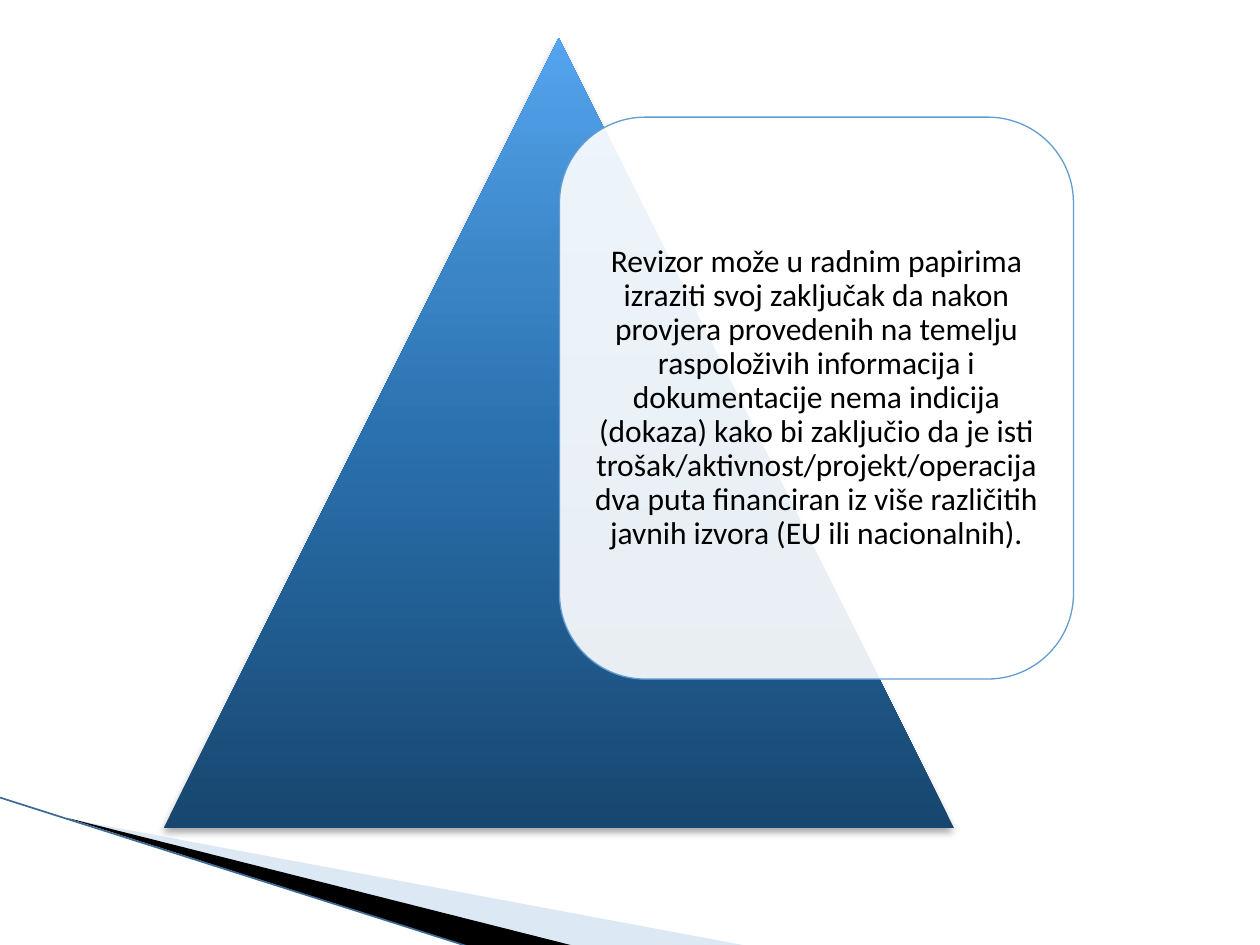
from lxml import etree
from pptx import Presentation
from pptx.dml.color import RGBColor
from pptx.enum import shapes, text
from pptx.oxml import parse_xml
from pptx.oxml.ns import nsdecls, qn
from pptx.util import Inches, Pt

WHITE = RGBColor(0xFF, 0xFF, 0xFF)
BLACK = RGBColor(0x00, 0x00, 0x00)
PALE_BLUE = RGBColor(0xAB, 0xC6, 0xE6)
EDGE_BLUE = RGBColor(0x3A, 0x6A, 0x96)
CARD_BLUE = RGBColor(0x62, 0x9D, 0xD1)
PYRAMID_STOPS = [
    (0, RGBColor(0x17, 0x46, 0x6F)),
    (50, RGBColor(0x2A, 0x71, 0xAF)),
    (70, RGBColor(0x3B, 0x85, 0xC6)),
    (100, RGBColor(0x55, 0xA4, 0xEF)),
]

CONCLUSION = (
    "Revizor može u radnim papirima izraziti svoj zaključak da nakon provjera "
    "provedenih na temelju raspoloživih informacija i dokumentacije nema indicija "
    "(dokaza) kako bi zaključio da je isti trošak/aktivnost/projekt/operacija dva "
    "puta financiran iz više različitih javnih izvora (EU ili nacionalnih)."
)


def set_format(target, values):
    for name, value in values.items():
        setattr(target, name, value)


def fill_solid(shape, color, opacity=100):
    shape.shadow.inherit = False
    shape.fill.solid()
    shape.fill.fore_color.rgb = color
    if opacity < 100:
        srgb = shape.fill._xPr.find(qn("a:solidFill"))[0]
        etree.SubElement(srgb, qn("a:alpha"), val=str(opacity * 1000))


def add_swoosh(slide, points, color, opacity=100):
    start, *rest = [(Inches(x), Inches(y)) for x, y in points]
    builder = slide.shapes.build_freeform(*start)
    builder.add_line_segments(rest, close=True)
    swoosh = builder.convert_to_shape()
    fill_solid(swoosh, color, opacity)
    swoosh.line.fill.background()


def add_edge(slide, start, end):
    ends = [Inches(value) for value in (*start, *end)]
    edge = slide.shapes.add_connector(shapes.MSO_CONNECTOR.STRAIGHT, *ends)
    edge.line.color.rgb = EDGE_BLUE
    edge.line.width = Pt(0.95)
    etree.SubElement(edge._element.spPr, qn("a:effectLst"))


def add_pyramid(slide, left, top, size):
    """Add a triangle shaded from dark base to light tip, with a soft drop shadow."""
    pyramid = slide.shapes.add_shape(
        shapes.MSO_SHAPE.ISOSCELES_TRIANGLE,
        Inches(left), Inches(top), Inches(size), Inches(size))
    pyramid.line.fill.background()
    stops = "".join(
        f'<a:gs pos="{position * 1000}"><a:srgbClr val="{color}"/></a:gs>'
        for position, color in PYRAMID_STOPS)
    gradient = parse_xml(
        f'<a:gradFill {nsdecls("a")} rotWithShape="1"><a:gsLst>{stops}</a:gsLst>'
        '<a:lin ang="16200000" scaled="0"/></a:gradFill>')
    shadow = parse_xml(
        f'<a:effectLst {nsdecls("a")}><a:outerShdw blurRad="{Pt(4)}" dist="{Pt(3)}" '
        'dir="5400000" rotWithShape="0"><a:srgbClr val="000000">'
        '<a:alpha val="35000"/></a:srgbClr></a:outerShdw></a:effectLst>')
    properties = pyramid._element.spPr
    properties.find(qn("a:prstGeom")).addnext(gradient)
    properties.append(shadow)


def add_card(slide, left, top, width, height):
    card = slide.shapes.add_shape(
        shapes.MSO_SHAPE.ROUNDED_RECTANGLE,
        Inches(left), Inches(top), Inches(width), Inches(height))
    fill_solid(card, WHITE, 90)
    card.line.color.rgb = CARD_BLUE
    card.line.width = Pt(0.75)


def add_statement(slide, wording, left, top, width, height):
    frame = slide.shapes.add_textbox(
        Inches(left), Inches(top), Inches(width), Inches(height)).text_frame
    margins = ("margin_left", "margin_top", "margin_right", "margin_bottom")
    set_format(frame, dict.fromkeys(margins, Inches(0.07)))
    set_format(frame, {"word_wrap": True,
                       "vertical_anchor": text.MSO_ANCHOR.MIDDLE})
    paragraph = frame.paragraphs[0]
    set_format(paragraph, {"alignment": text.PP_ALIGN.CENTER, "line_spacing": 0.9})
    run = paragraph.add_run()
    run.text = wording
    set_format(run.font, {"name": "Calibri", "size": Pt(18)})
    run.font.color.rgb = BLACK


def main():
    deck = Presentation()
    set_format(deck, {"slide_width": Inches(10), "slide_height": Inches(7.5)})
    slide = deck.slides.add_slide(deck.slide_layouts[6])

    add_swoosh(slide, [(0.55, 6.5), (5.95, 7.51), (4.56, 7.51)], PALE_BLUE, 40)
    add_swoosh(slide, [(0.53, 6.49), (4.57, 7.51), (3.72, 7.51)], BLACK)
    add_edge(slide, (0, 6.33), (3.71, 7.51))

    add_pyramid(slide, 1.3, 0.3, 6.27)
    left, top, width, height = 4.44, 0.93, 4.08, 4.46
    inset = 0.2
    add_card(slide, left, top, width, height)
    add_statement(slide, CONCLUSION, left + inset, top + inset,
                  width - 2 * inset, height - 2 * inset)

    deck.save("out.pptx")


if __name__ == "__main__":
    main()
